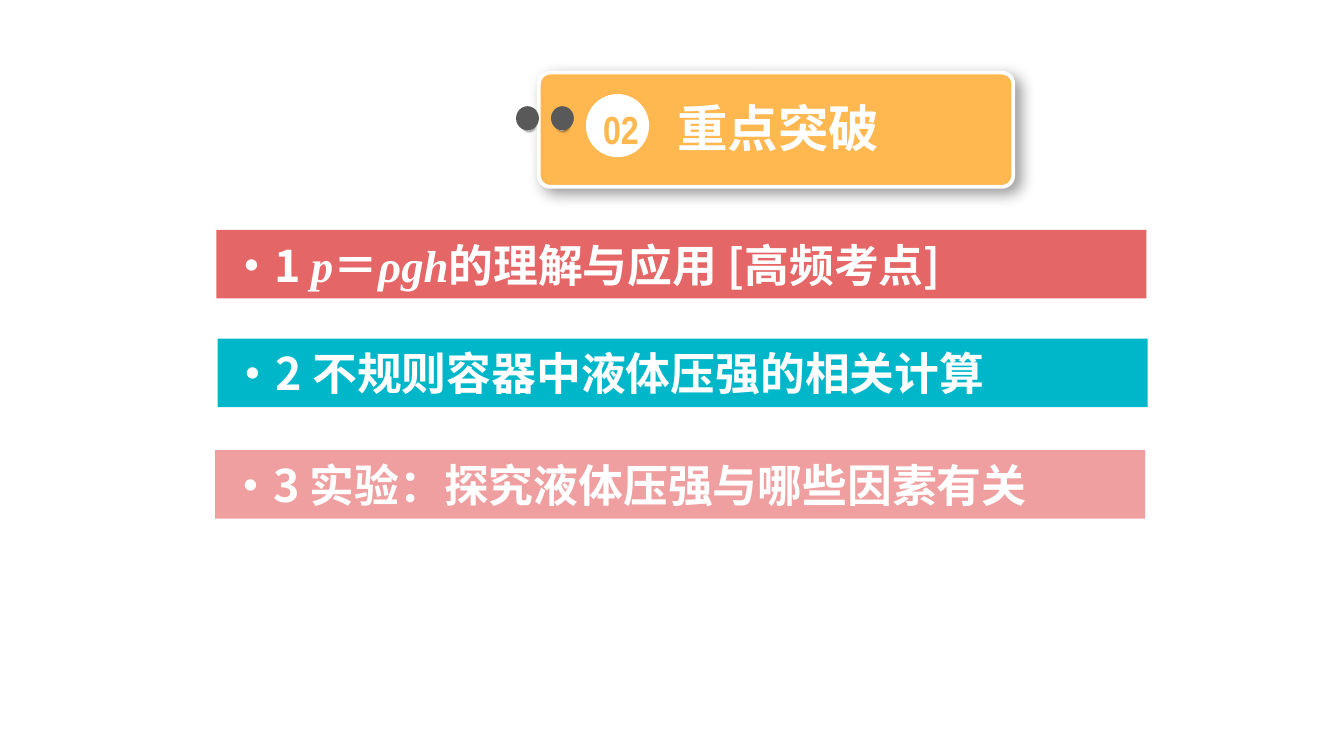
from lxml.etree import SubElement
from pptx import Presentation
from pptx.dml.color import RGBColor
from pptx.enum.shapes import MSO_SHAPE
from pptx.enum.text import MSO_ANCHOR, MSO_AUTO_SIZE, PP_ALIGN
from pptx.oxml.ns import qn
from pptx.util import Inches, Pt

HUES = {"white": "FFFFFF", "gold": "FFB850", "gray": "595959", "silver": "A6A6A6",
        "pale": "F2F2F2", "red": "E56666", "teal": "00B7CA", "pink": "EF9F9F"}
SANS, SERIF = "Noto Sans CJK SC", "Times New Roman"

# Widescreen 16:9 page
deck = Presentation()
deck.slide_width = Inches(10)
deck.slide_height = Inches(10 * 9 / 16)
slide = deck.slides.add_slide(deck.slide_layouts[6])


def add_shape(kind, box, hue=None, glow=None):
    """Add a borderless shape; glow is the blur and distance of its shadow."""
    shape = slide.shapes.add_shape(kind, *map(Inches, box))
    shape.shadow.inherit = False
    shape.line.fill.background()
    if hue:
        shape.fill.solid()
        shape.fill.fore_color.rgb = RGBColor.from_string(HUES[hue])
    if glow:
        effects = shape._element.spPr.find(qn("a:effectLst"))
        blur, dist = glow
        shade = SubElement(effects, qn("a:outerShdw"), blurRad=str(Pt(blur)),
                           dist=str(Pt(dist)), dir="2700000", algn="tl", rotWithShape="0")
        tint = SubElement(shade, qn("a:srgbClr"), val="000000")
        SubElement(tint, qn("a:alpha"), val="40000")
    return shape


def add_text(shape, runs, size, align, hue="white"):
    """Write bold runs, each given as text, font and italic flag."""
    frame = shape.text_frame
    look = {"word_wrap": True, "auto_size": MSO_AUTO_SIZE.NONE,
            "vertical_anchor": MSO_ANCHOR.MIDDLE}
    for name, value in look.items():
        setattr(frame, name, value)
    line = frame.paragraphs[0]
    line.alignment = align
    for text, face, slant in runs:
        run = line.add_run()
        run.text = text
        style = {"size": Pt(size), "bold": True, "italic": slant, "name": face}
        for name, value in style.items():
            setattr(run.font, name, value)
        run.font.color.rgb = RGBColor.from_string(HUES[hue])
        SubElement(run.font._element, qn("a:ea"), typeface=SANS)


# Title card
card = add_shape(MSO_SHAPE.ROUNDED_RECTANGLE, (4.01, 0.54, 3.53, 0.85), "gold", (8, 4))
card.adjustments[0] = 0.1
card.line.color.rgb = RGBColor.from_string(HUES["white"])
card.line.width = Pt(2)

# Binder pins with metal ends
metal = [(0, "white"), (17, "silver"), (35, "pale"),
         (55, "silver"), (75, "pale"), (100, "silver")]
for end, left in ((4.13, 4.1), (3.88, 3.84)):
    pin = add_shape(MSO_SHAPE.OVAL, (end, 0.87, 0.1, 0.1), glow=(1, 1))
    pin.rotation = 270
    pin.fill.gradient()
    stops = pin._element.spPr.find(qn("a:gradFill")).find(qn("a:gsLst"))
    for stop in list(stops):
        stops.remove(stop)
    for place, hue in metal:
        stop = SubElement(stops, qn("a:gs"), pos=str(place * 1000))
        SubElement(stop, qn("a:srgbClr"), val=HUES[hue])
    pin.fill.gradient_angle = 315
    add_shape(MSO_SHAPE.OVAL, (left, 0.79, 0.17, 0.18), "gray")

# Title and number, with the disc between them in depth
title = slide.shapes.add_textbox(*map(Inches, (4.55, 0.67, 2.48, 0.56)))
add_text(title, [("重点突破", SANS, False)], 27, PP_ALIGN.CENTER)
add_shape(MSO_SHAPE.OVAL, (4.36, 0.7, 0.47, 0.47), "white")
number = slide.shapes.add_textbox(*map(Inches, (4.34, 0.73, 0.56, 0.45)))
add_text(number, [("02", "Arial Narrow", False)], 21, PP_ALIGN.CENTER, "gold")

# Topic bars
topics = [
    (1.61, 1.71, "red", [("·1 ", SANS, False), ("p", SERIF, True), ("＝", SERIF, False),
                         ("ρgh", SERIF, True), ("的", SERIF, False),
                         ("理解与应用 [高频考点]", SANS, False)]),
    (1.62, 2.52, "teal", [("·2 不规则容器中液体压强的相关计算", SANS, False)]),
    (1.6, 3.35, "pink", [("·3 实验：探究液体压强与哪些因素有关", SANS, False)]),
]
for left, top, hue, runs in topics:
    bar = add_shape(MSO_SHAPE.RECTANGLE, (left, top, 6.92, 0.51), hue)
    add_text(bar, runs, 24, PP_ALIGN.LEFT)

deck.save("out.pptx")
